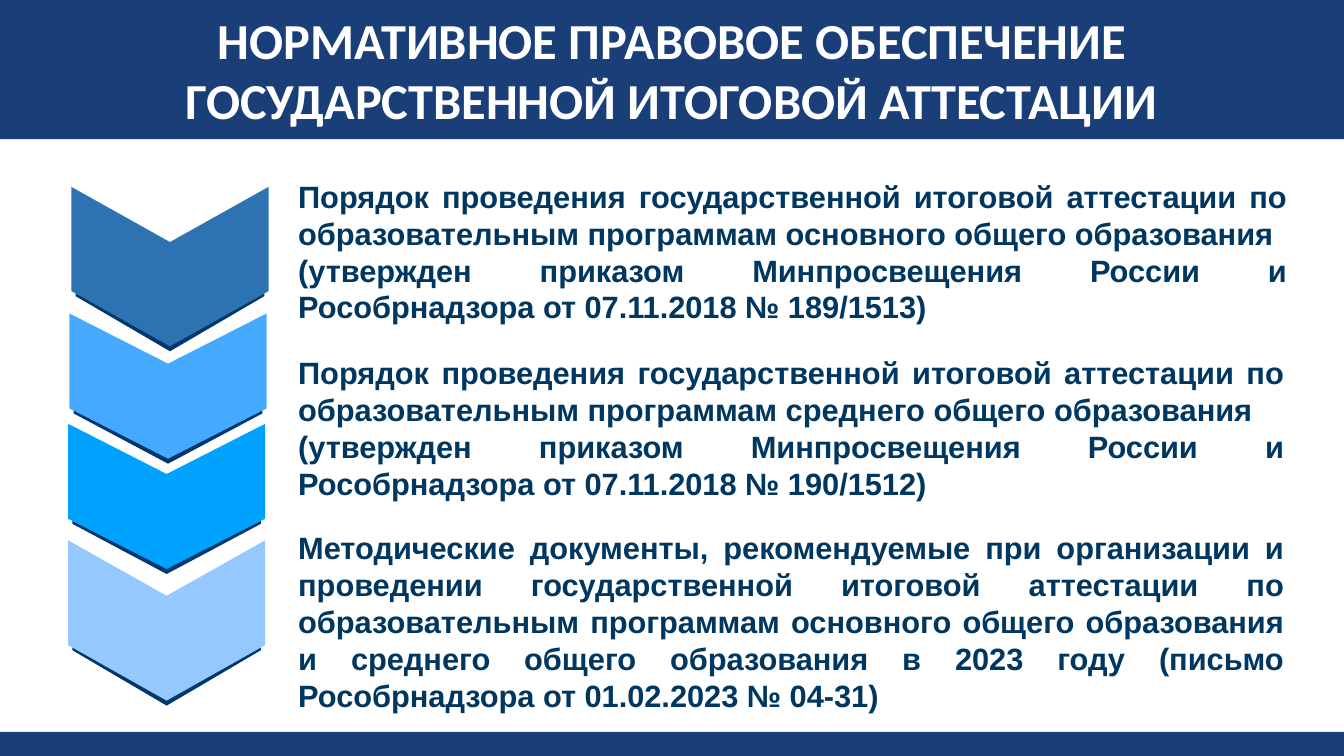
"""Build the slide on the legal basis of the state final attestation."""
import pptx
import pptx.util
import pptx.dml.color
import pptx.enum.shapes
import pptx.enum.text

Pt = pptx.util.Pt
RGBColor = pptx.dml.color.RGBColor
MSO_SHAPE = pptx.enum.shapes.MSO_SHAPE
PP_ALIGN = pptx.enum.text.PP_ALIGN
MSO_ANCHOR = pptx.enum.text.MSO_ANCHOR
MSO_AUTO_SIZE = pptx.enum.text.MSO_AUTO_SIZE

NAVY = RGBColor(0x1A, 0x3E, 0x78)
INK = RGBColor(0x00, 0x37, 0x60)
EDGE = RGBColor(0x00, 0x38, 0x6E)
WHITE = RGBColor(0xFF, 0xFF, 0xFF)
STEEL = RGBColor(0x2D, 0x73, 0xB2)
SKY = RGBColor(0x45, 0xAA, 0xFF)
AZURE = RGBColor(0x00, 0xA2, 0xFF)
PALE = RGBColor(0x94, 0xC8, 0xFF)

HEADING = "НОРМАТИВНОЕ ПРАВОВОЕ ОБЕСПЕЧЕНИЕ ГОСУДАРСТВЕННОЙ ИТОГОВОЙ АТТЕСТАЦИИ"
DOCUMENTS = [
    (123.1, 720.7, 113.8, [
        "Порядок проведения государственной итоговой аттестации по "
        "образовательным программам основного общего образования",
        "(утвержден приказом Минпросвещения России и Рособрнадзора "
        "от 07.11.2018 № 189/1513)"]),
    (249.1, 718.6, 113.8, [
        "Порядок проведения государственной итоговой аттестации по "
        "образовательным программам среднего общего образования",
        "(утвержден приказом Минпросвещения России и Рособрнадзора "
        "от 07.11.2018 № 190/1512)"]),
    (374.4, 718.6, 140.4, [
        "Методические документы, рекомендуемые при организации и проведении "
        "государственной итоговой аттестации по образовательным программам "
        "основного общего образования и среднего общего образования в 2023 году "
        "(письмо Рособрнадзора от 01.02.2023 № 04-31)"]),
]
STEPS = [
    (121.4, 190.4, 113.8, STEEL),
    (120, 275.8, 103.7, SKY),
    (119, 354.6, 103.7, AZURE),
    (119, 443.2, 114.5, PALE),
]
SLIDE_WIDTH, SLIDE_HEIGHT = 960, 540
HEADER_HEIGHT, FOOTER_HEIGHT = 99.4, 17.3
DOCUMENT_LEFT = 205.9
STEP_WIDTH, STEP_NOTCH = 140.8, 0.346
EDGE_DROP, EDGE_INSET = 3.6, 3


def write(holder, paragraphs, *, font, size, color, align, anchor, spacing=None):
    """Fill a shape with bold paragraphs in one format."""
    frame = holder.text_frame
    frame.word_wrap = True
    frame.auto_size = MSO_AUTO_SIZE.NONE
    frame.vertical_anchor = anchor
    frame.text = "\n".join(paragraphs)
    for paragraph in frame.paragraphs:
        paragraph.alignment = align
        paragraph.space_before = Pt(0)
        if spacing:
            paragraph.line_spacing = Pt(spacing)
        face = paragraph.runs[0].font
        face.name, face.size, face.bold = font, Pt(size), True
        face.color.rgb = color


def add_block(slide, kind, left, top, width, height, color):
    """Add a flat preset shape without outline or shadow."""
    block = slide.shapes.add_shape(kind, Pt(left), Pt(top), Pt(width), Pt(height))
    block.shadow.inherit = False
    block.fill.solid()
    block.fill.fore_color.rgb = color
    block.line.fill.background()
    return block


def add_chevron(slide, center_x, center_y, width, height, color):
    """Add a chevron pointing down, given its visible width and height."""
    chevron = add_block(slide, MSO_SHAPE.CHEVRON, center_x - height / 2,
                        center_y - width / 2, height, width, color)
    chevron.adjustments[0] = STEP_NOTCH
    chevron.rotation = 90


def main():
    """Compose the slide and save it."""
    deck = pptx.Presentation()
    deck.slide_width, deck.slide_height = Pt(SLIDE_WIDTH), Pt(SLIDE_HEIGHT)
    slide = deck.slides.add_slide(deck.slide_layouts[5])

    add_block(slide, MSO_SHAPE.RECTANGLE, 0, SLIDE_HEIGHT - FOOTER_HEIGHT,
              SLIDE_WIDTH, FOOTER_HEIGHT, NAVY)

    header = slide.shapes.title
    header.left, header.top = Pt(0), Pt(0)
    header.width, header.height = Pt(SLIDE_WIDTH), Pt(HEADER_HEIGHT)
    header.fill.solid()
    header.fill.fore_color.rgb = NAVY
    write(header, [HEADING], font="Calibri", size=36, color=WHITE,
          align=PP_ALIGN.CENTER, anchor=MSO_ANCHOR.MIDDLE)

    for center_x, center_y, height, color in STEPS:
        add_chevron(slide, center_x, center_y + EDGE_DROP,
                    STEP_WIDTH - 2 * EDGE_INSET, height, EDGE)
        add_chevron(slide, center_x, center_y, STEP_WIDTH, height, color)

    for top, width, height, paragraphs in DOCUMENTS:
        document = slide.shapes.add_textbox(Pt(DOCUMENT_LEFT), Pt(top), Pt(width), Pt(height))
        write(document, paragraphs, font="Arial", size=22, color=INK,
              align=PP_ALIGN.JUSTIFY, anchor=MSO_ANCHOR.TOP, spacing=26.4)

    deck.save("out.pptx")


if __name__ == "__main__":
    main()
